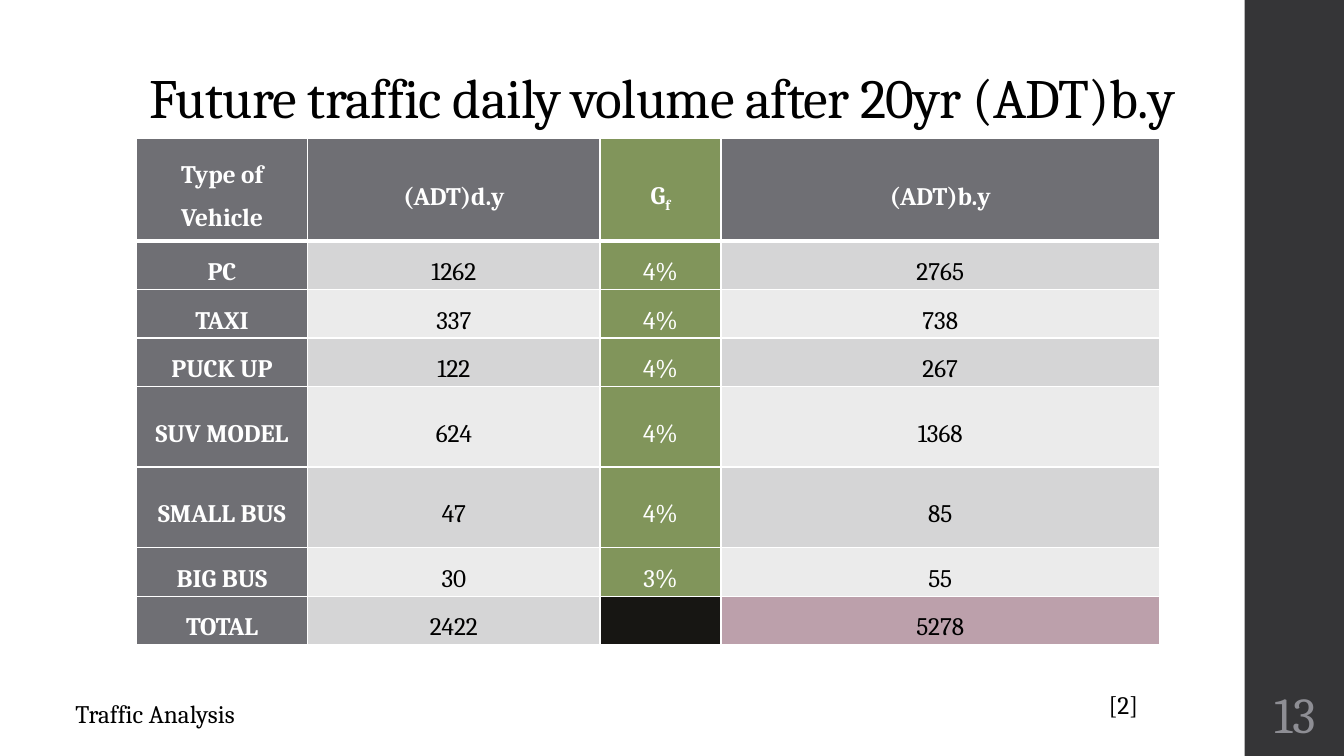
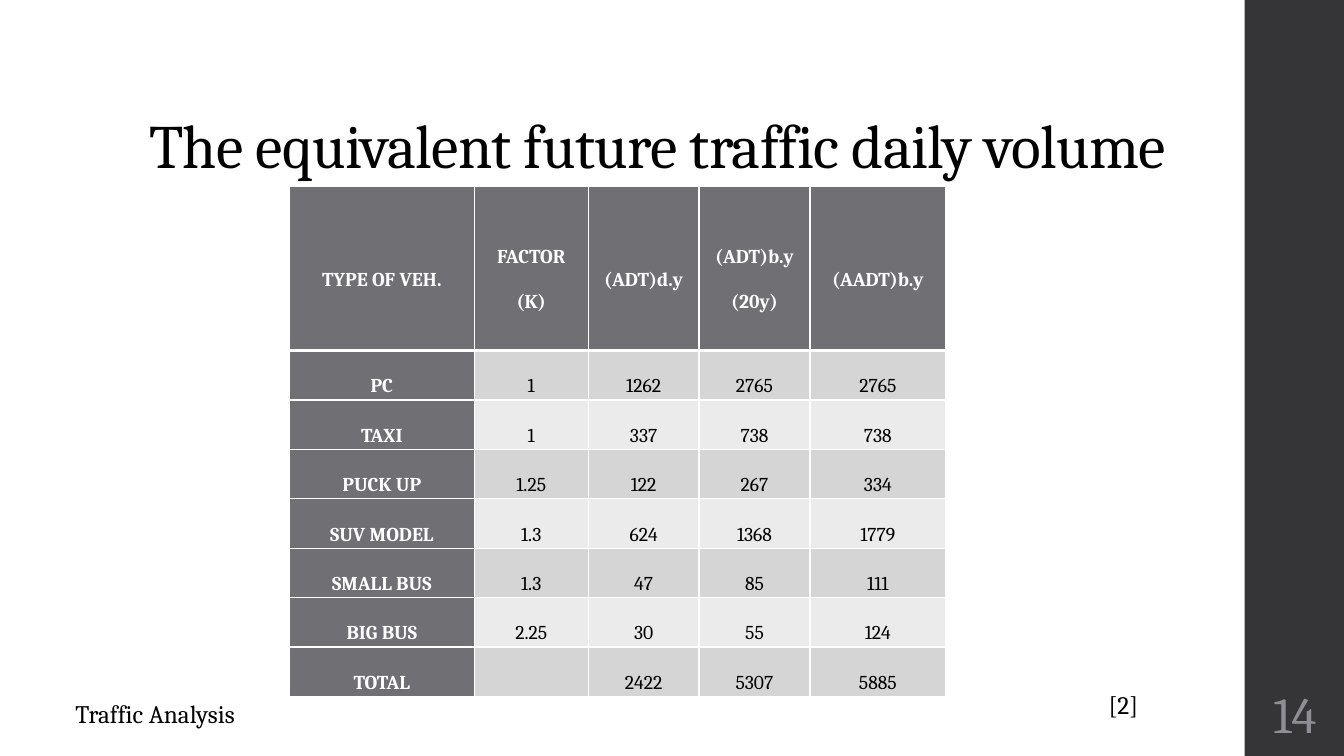
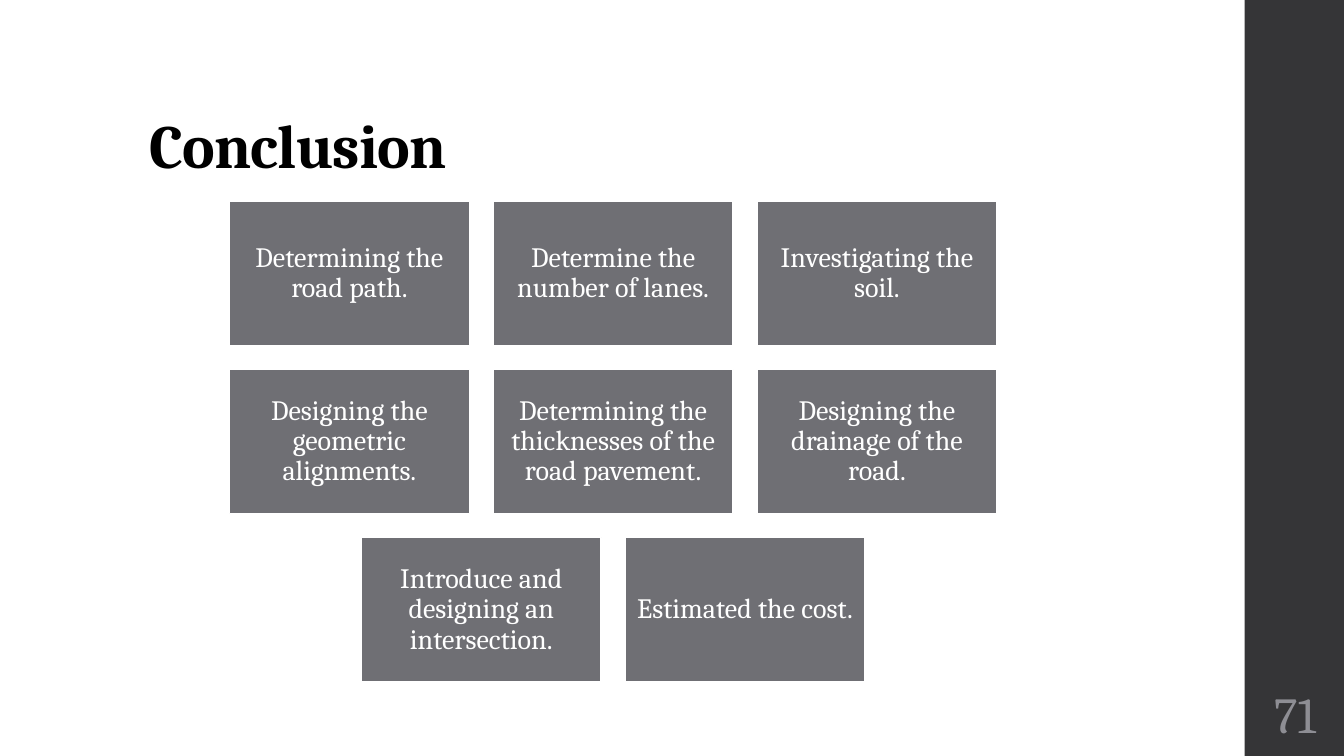
from lxml import etree
from pptx import Presentation
from pptx.dml.color import RGBColor
from pptx.enum.shapes import MSO_SHAPE
from pptx.enum.text import MSO_ANCHOR, MSO_AUTO_SIZE, PP_ALIGN
from pptx.oxml.ns import qn
from pptx.util import Pt

RECTANGLE = MSO_SHAPE.RECTANGLE
MIDDLE, BOTTOM = MSO_ANCHOR.MIDDLE, MSO_ANCHOR.BOTTOM
LEFT, CENTER = PP_ALIGN.LEFT, PP_ALIGN.CENTER
NO_AUTOFIT = MSO_AUTO_SIZE.NONE

FONT = "Cambria"
BLACK = RGBColor(0x00, 0x00, 0x00)
WHITE = RGBColor(0xFF, 0xFF, 0xFF)
BAND = RGBColor(0x35, 0x35, 0x37)
NUMBER = RGBColor(0x8E, 0x8E, 0x94)
GREY = RGBColor(0x6F, 0x6F, 0x74)
DARK_ROW = RGBColor(0xD5, 0xD5, 0xD6)
LIGHT_ROW = RGBColor(0xEB, 0xEB, 0xEB)
GREEN = RGBColor(0x81, 0x95, 0x5B)
NEAR_BLACK = RGBColor(0x17, 0x16, 0x13)
ROSE = RGBColor(0xBC, 0xA0, 0xAB)

# Content
FUTURE_VOLUME = [
    ("Type of Vehicle", "(ADT)d.y", "Gf", "(ADT)b.y"),
    ("PC", "1262", "4%", "2765"),
    ("TAXI", "337", "4%", "738"),
    ("PUCK UP", "122", "4%", "267"),
    ("SUV MODEL", "624", "4%", "1368"),
    ("SMALL BUS", "47", "4%", "85"),
    ("BIG BUS", "30", "3%", "55"),
    ("TOTAL", "2422", "", "5278"),
]
EQUIVALENT_VOLUME = [
    ("TYPE OF VEH.", "FACTOR (K)", "(ADT)d.y", "(ADT)b.y\n(20y)", "(AADT)b.y"),
    ("PC", "1", "1262", "2765", "2765"),
    ("TAXI", "1", "337", "738", "738"),
    ("PUCK UP", "1.25", "122", "267", "334"),
    ("SUV MODEL", "1.3", "624", "1368", "1779"),
    ("SMALL BUS", "1.3", "47", "85", "111"),
    ("BIG BUS", "2.25", "30", "55", "124"),
    ("TOTAL", "", "2422", "5307", "5885"),
]
CONCLUSIONS = [
    ("Determining the road path.", "Determine the number of lanes.",
     "Investigating the soil."),
    ("Designing the geometric alignments.",
     "Determining the thicknesses of the road pavement.",
     "Designing the drainage of the road."),
    ("Introduce and designing an intersection.", "Estimated the cost."),
]

# Layout measures, in points
BAND_LEFT, BAND_WIDTH, SLIDE_HEIGHT = 889, 72, 540
CARD_WIDTH, CARD_HEIGHT, CARD_GAP = 171.4, 103, 17
CARDS_CENTER, CARDS_TOP = 438, 144


def place(left, top, width, height):
    return Pt(left), Pt(top), Pt(width), Pt(height)


def write(frame, text, size, color, bold=False, align=LEFT, spacing=1.0):
    frame.text = text
    for paragraph in frame.paragraphs:
        paragraph.alignment = align
        paragraph.line_spacing = spacing
        for run in paragraph.runs:
            run.font.name = FONT
            run.font.size = Pt(size)
            run.font.bold = bold
            run.font.color.rgb = color


def set_margins(frame, margin):
    frame.margin_left = frame.margin_right = Pt(margin)
    frame.margin_top = frame.margin_bottom = Pt(margin)


def add_label(slide, box, text, size, color, align=LEFT):
    frame = slide.shapes.add_textbox(*place(*box)).text_frame
    frame.word_wrap = True
    frame.vertical_anchor = MIDDLE
    write(frame, text, size, color, align=align)
    return frame


def add_block(slide, box, fill):
    block = slide.shapes.add_shape(RECTANGLE, *place(*box))
    block.shadow.inherit = False
    block.fill.solid()
    block.fill.fore_color.rgb = fill
    block.line.fill.background()
    return block


def add_slide(prs, title, number, size=44, bold=False, height=104.4, rise=0):
    """Add a slide with title and number; rise lifts the title in its box."""
    slide = prs.slides.add_slide(prs.slide_layouts[5])
    heading = slide.shapes.title
    heading.left, heading.top, heading.width, heading.height = place(
        99.4, 28.8, 763.2, height)
    frame = heading.text_frame
    frame.auto_size = NO_AUTOFIT
    frame.vertical_anchor = BOTTOM
    frame.margin_bottom = Pt(3.6 + rise)
    write(frame, title, size, BLACK, bold, spacing=0.9)
    frame.paragraphs[0].runs[0].font._element.set("spc", "-50")
    set_margins(add_label(slide, (BAND_LEFT, 486, BAND_WIDTH, 46.8), number,
                          36, NUMBER, CENTER), 3.6)
    return slide


def add_footer(slide):
    add_label(slide, (46.8, 493.2, 260, 32.4), "Traffic Analysis", 18, BLACK)
    add_label(slide, (784.8, 486.7, 39.6, 32.4), "[2]", 18, BLACK)


def set_borders(cell, bottom, top):
    properties = cell._tc.get_or_add_tcPr()
    widths = (("lnL", 1), ("lnR", 1), ("lnT", top), ("lnB", bottom))
    for position, (side, width) in enumerate(widths):
        line = etree.Element(qn("a:" + side), w=str(Pt(width)))
        fill = etree.SubElement(line, qn("a:solidFill"))
        etree.SubElement(fill, qn("a:srgbClr"), val=str(WHITE))
        properties.insert(position, line)


def add_volume_table(slide, rows, left, top, widths, heights, size, spacing,
                     column_fills, cell_fills):
    table = slide.shapes.add_table(
        len(rows), len(widths),
        *place(left, top, sum(widths), sum(heights))).table
    for column, width in zip(table.columns, widths):
        column.width = Pt(width)
    for r, (values, height) in enumerate(zip(rows, heights)):
        table.rows[r].height = Pt(height)
        for c, value in enumerate(values):
            cell = table.cell(r, c)
            is_head = r == 0 or c == 0
            base = GREY if is_head else DARK_ROW if r % 2 else LIGHT_ROW
            fill = cell_fills.get((r, c), column_fills.get(c, base))
            cell.fill.solid()
            cell.fill.fore_color.rgb = fill
            cell.margin_left = cell.margin_right = Pt(5)
            cell.margin_top = cell.margin_bottom = 0
            cell.vertical_anchor = MIDDLE
            color = WHITE if fill in (GREY, GREEN) else BLACK
            write(cell.text_frame, value, size, color, is_head, CENTER, spacing)
            set_borders(cell, 3 if r == 0 else 1, 3 if r == 1 else 1)
    return table


def add_growth_subscript(cell):
    """Lower the f of the growth factor heading."""
    paragraph = cell.text_frame.paragraphs[0]
    symbol = paragraph.runs[0]
    symbol.text = "G"
    index = paragraph.add_run()
    index.text = "f"
    index.font.name, index.font.size, index.font.bold = FONT, Pt(18), True
    index.font.color.rgb = WHITE
    index.font._element.set("baseline", "-25000")


def add_cards(slide):
    for r, row in enumerate(CONCLUSIONS):
        row_width = len(row) * (CARD_WIDTH + CARD_GAP) - CARD_GAP
        for c, text in enumerate(row):
            card = add_block(slide, (
                CARDS_CENTER - row_width / 2 + c * (CARD_WIDTH + CARD_GAP),
                CARDS_TOP + r * (CARD_HEIGHT + CARD_GAP),
                CARD_WIDTH, CARD_HEIGHT), GREY)
            card.line.color.rgb = WHITE
            card.line.width = Pt(1.1)
            frame = card.text_frame
            frame.word_wrap = True
            frame.vertical_anchor = MIDDLE
            set_margins(frame, 5.8)
            write(frame, text, 20, WHITE, align=CENTER, spacing=0.9)


def main():
    prs = Presentation()
    prs.slide_width, prs.slide_height = Pt(960), Pt(SLIDE_HEIGHT)

    # Future volume
    future = add_slide(prs, "Future traffic daily volume after 20yr (ADT)b.y",
                       "13", size=39.6, height=115.2, rise=47)
    table = add_volume_table(
        future, FUTURE_VOLUME, 97.4, 98.8, (122.4, 208.8, 86.4, 313.2),
        (73.5, 34.6, 34.6, 34.6, 57.6, 57.6, 34.6, 34.6), 18, 1.5,
        {2: GREEN}, {(7, 2): NEAR_BLACK, (7, 3): ROSE})
    add_growth_subscript(table.cell(0, 2))
    add_footer(future)

    # Side band, shared by all slides through the layout
    band = add_block(future, (BAND_LEFT, 0, BAND_WIDTH, SLIDE_HEIGHT), BAND)
    prs.slide_layouts[5].shapes.element.append(band.element)

    # Equivalent volume
    equivalent = add_slide(prs, "The equivalent future traffic daily volume", "14")
    add_volume_table(
        equivalent, EQUIVALENT_VOLUME, 206.8, 133.2,
        (132, 81.4, 79.2, 79.2, 97), (117.2,) + (35.3,) * 7, 14, 2.0, {}, {})
    add_footer(equivalent)

    # Conclusion
    add_cards(add_slide(prs, "Conclusion", "71", bold=True))

    prs.save("out.pptx")


if __name__ == "__main__":
    main()
